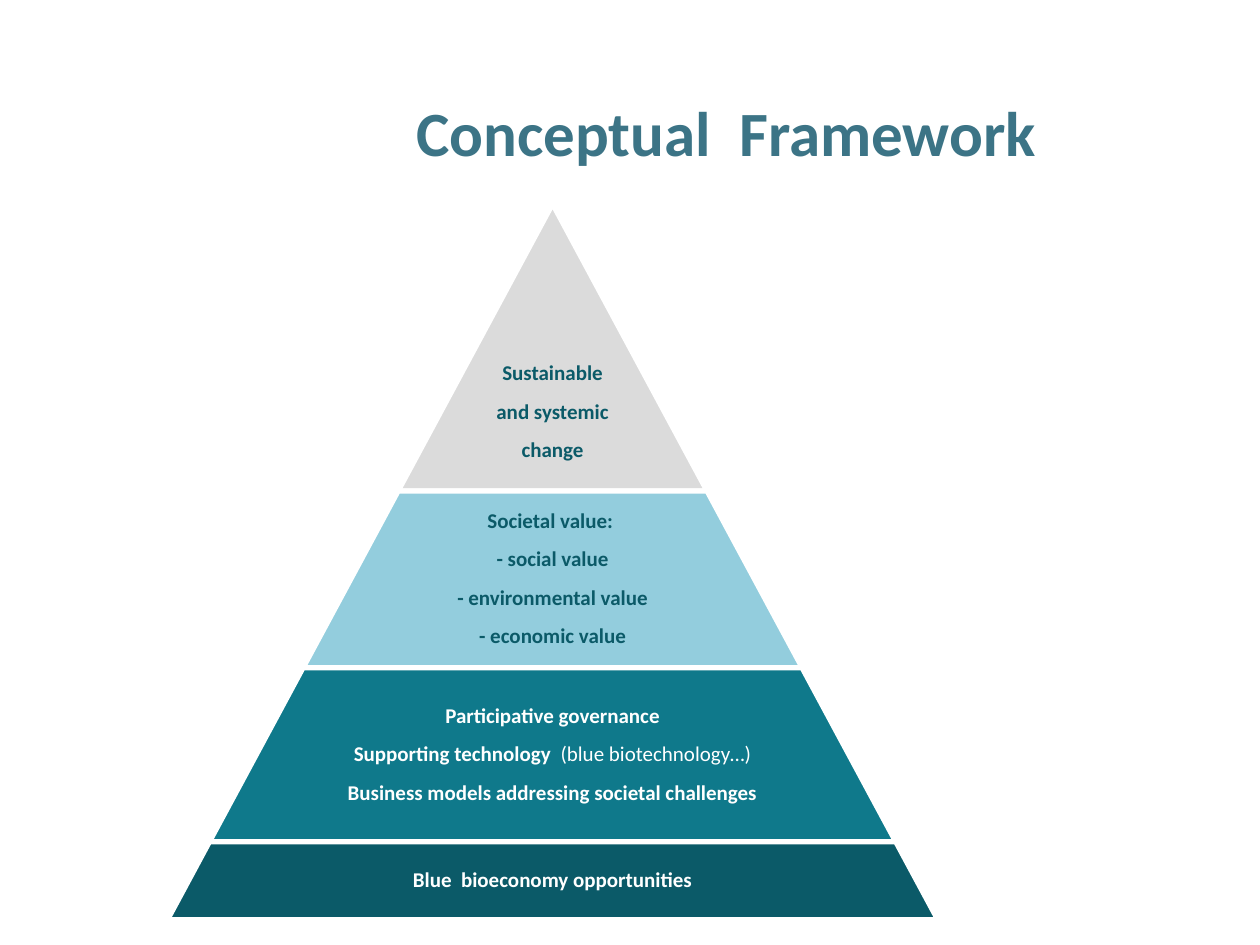
from pptx import Presentation
from pptx.dml.color import RGBColor
from pptx.enum.shapes import MSO_SHAPE as Shape
from pptx.enum.text import MSO_ANCHOR as Anchor, PP_ALIGN as Align
from pptx.util import Cm, Pt

TITLE_BLUE = RGBColor(0x3C, 0x74, 0x86)
GREY = RGBColor(0xDB, 0xDB, 0xDB)
SKY = RGBColor(0x93, 0xCD, 0xDD)
TEAL = RGBColor(0x0F, 0x79, 0x8B)
DEEP_TEAL = RGBColor(0x0B, 0x5A, 0x68)
WHITE = RGBColor(0xFF, 0xFF, 0xFF)

APEX_X, APEX_Y = 11.14, 4.11
SLOPE = 0.538  # sideways run of an edge per unit of height

# height, fill, text colour, text width share, anchor, bottom margin,
# paragraphs as lists of (words, bold)
LEVELS = [
    (5.79, GREY, DEEP_TEAL, 1, Anchor.BOTTOM, 0.58,
     [[("Sustainable", True)], [("and systemic", True)], [("change", True)]]),
    (3.56, SKY, DEEP_TEAL, 0.65, Anchor.MIDDLE, 0.05,
     [[("Societal value: ", True)], [("- social value", True)],
      [("- environmental value", True)], [("- economic value", True)]]),
    (3.51, TEAL, WHITE, 0.65, Anchor.MIDDLE, 0.05,
     [[("Participative governance", True)],
      [("Supporting technology  ", True), ("(blue biotechnology…)", False)],
      [("Business models addressing societal challenges", True)]]),
    (1.57, DEEP_TEAL, WHITE, 0.65, Anchor.MIDDLE, 0.05,
     [[("Blue  bioeconomy opportunities", True)]]),
]


class PyramidSlide:
    font_name = "Calibri"
    line_spacing = 0.9

    def __init__(self, deck):
        self.page = deck.slides.add_slide(deck.slide_layouts[5])

    def style(self, font, size, color, bold=True):
        font.name, font.size, font.bold = self.font_name, Pt(size), bold
        font.color.rgb = color

    def title(self, words, left, top, width, height):
        title = self.page.shapes.title
        title.left, title.top = Cm(left), Cm(top)
        title.width, title.height = Cm(width), Cm(height)
        frame = title.text_frame
        frame.text = words
        frame.vertical_anchor = Anchor.MIDDLE
        para = frame.paragraphs[0]
        para.alignment, para.line_spacing = Align.CENTER, self.line_spacing
        self.style(para.runs[0].font, 36, TITLE_BLUE)

    def band(self, top, width, height, fill):
        band = self.page.shapes.add_shape(
            Shape.TRAPEZOID, Cm(APEX_X - width / 2), Cm(top), Cm(width), Cm(height))
        band.adjustments[0] = SLOPE
        band.shadow.inherit = False
        band.fill.solid()
        band.fill.fore_color.rgb = fill
        band.line.color.rgb, band.line.width = WHITE, Pt(3)

    def label(self, top, width, height, color, anchor, bottom_margin, paragraphs):
        box = self.page.shapes.add_textbox(
            Cm(APEX_X - width / 2), Cm(top), Cm(width), Cm(height))
        frame = box.text_frame
        frame.word_wrap, frame.vertical_anchor = True, anchor
        frame.margin_left = frame.margin_right = frame.margin_top = Cm(0.05)
        frame.margin_bottom = Cm(bottom_margin)
        for index, spans in enumerate(paragraphs):
            para = frame.add_paragraph() if index else frame.paragraphs[0]
            para.alignment, para.line_spacing = Align.CENTER, self.line_spacing
            para.space_after = Pt(9)
            for words, bold in spans:
                span = para.add_run()
                span.text = words
                self.style(span.font, 12, color, bold)


def main():
    deck = Presentation()
    deck.slide_width, deck.slide_height = Cm(25.4), Cm(19.05)
    slide = PyramidSlide(deck)
    slide.title("Conceptual  Framework", 4.9, 1.68, 19.48, 2.13)
    top = APEX_Y
    for height, fill, color, share, anchor, margin, paragraphs in LEVELS:
        width = 2 * SLOPE * (top + height - APEX_Y)
        slide.band(top, width, height, fill)
        slide.label(top, width * share, height, color, anchor, margin, paragraphs)
        top += height
    deck.save("out.pptx")


if __name__ == "__main__":
    main()
